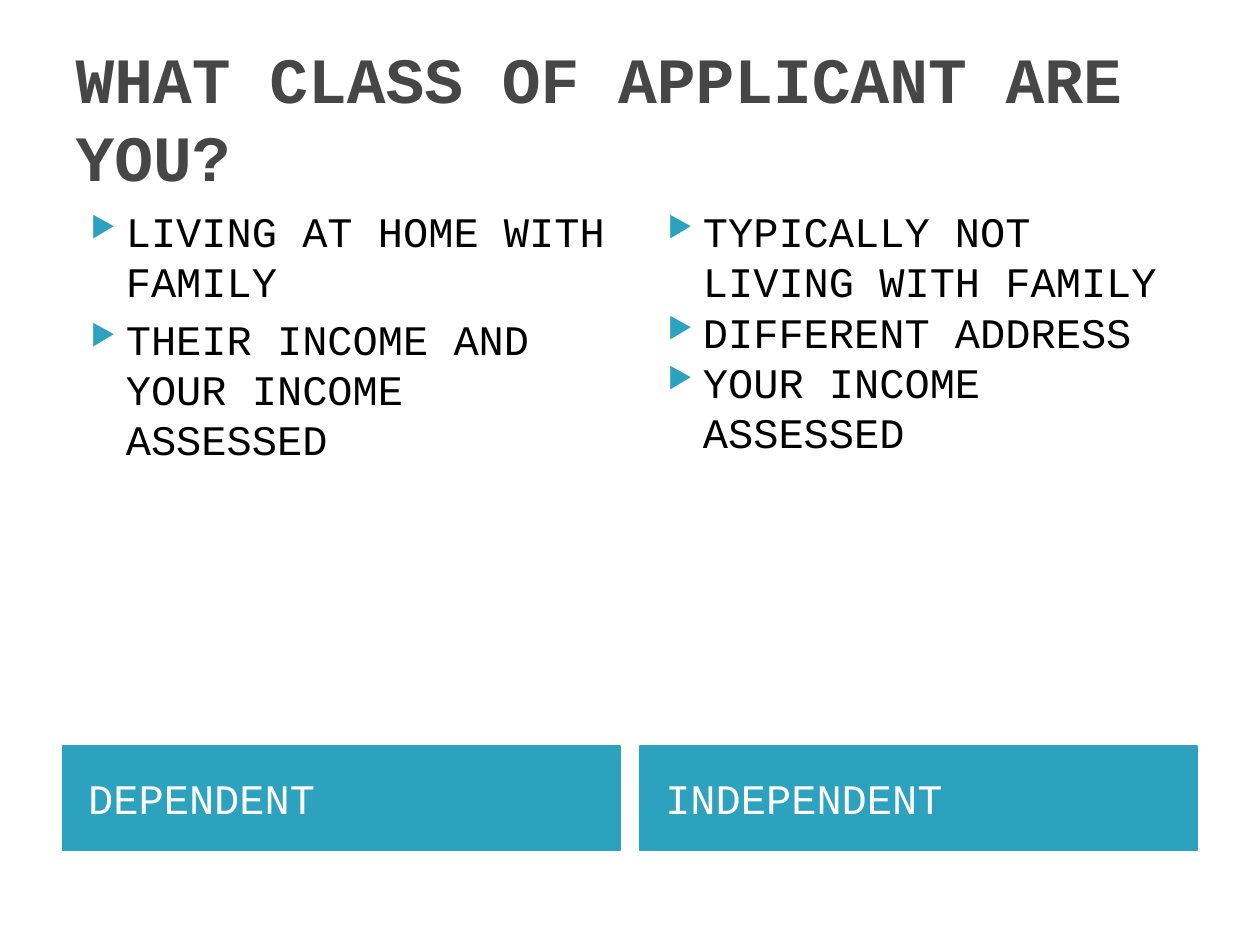
from lxml import etree
from pptx import Presentation
from pptx.dml.color import RGBColor
from pptx.enum.shapes import MSO_SHAPE
from pptx.enum.text import MSO_ANCHOR, MSO_AUTO_SIZE, PP_ALIGN
from pptx.oxml.ns import qn
from pptx.util import Inches, Pt

RECTANGLE = MSO_SHAPE.RECTANGLE
MIDDLE = MSO_ANCHOR.MIDDLE
NO_AUTOFIT = MSO_AUTO_SIZE.NONE
LEFT = PP_ALIGN.LEFT

TEAL = RGBColor(0x2D, 0xA2, 0xBF)
GREY = RGBColor(0x46, 0x46, 0x46)
BLACK = RGBColor(0, 0, 0)
WHITE = RGBColor(255, 255, 255)

FONT = "Courier New"
MARGIN = 0.5
COLUMN_WIDTH = 4.42
COLUMN_STEP = 4.58

# Heading, gap between bullets in points, bullets
COLUMNS = [
    ("DEPENDENT", 4, [
        "LIVING AT HOME WITH FAMILY",
        "THEIR INCOME AND YOUR INCOME ASSESSED",
    ]),
    ("INDEPENDENT", 0, [
        "TYPICALLY NOT LIVING WITH FAMILY",
        "DIFFERENT ADDRESS",
        "YOUR INCOME ASSESSED",
    ]),
]


def write(p, text, color, size=24, bold=False):
    p.alignment = LEFT
    r = p.add_run()
    r.text = text
    r.font.color.rgb = color
    values = {"name": FONT, "size": Pt(size), "bold": bold}
    for name, value in values.items():
        setattr(r.font, name, value)


def add_bullet(p):
    """Give the paragraph a hanging teal triangle."""
    pPr = p._p.get_or_add_pPr()
    pPr.set("marL", str(Inches(0.4)))
    pPr.set("indent", str(Inches(-0.28)))
    color = etree.SubElement(pPr, qn("a:buClr"))
    etree.SubElement(color, qn("a:srgbClr"), val=str(TEAL))
    etree.SubElement(pPr, qn("a:buSzPct"), val="68000")
    etree.SubElement(pPr, qn("a:buChar"), char="▶")


def set_title(s, text):
    title = s.shapes.title
    box = {"left": MARGIN, "top": 0.3, "width": 9, "height": 1.25}
    for name, value in box.items():
        setattr(title, name, Inches(value))
    tf = title.text_frame
    tf.auto_size = NO_AUTOFIT
    tf.vertical_anchor = MIDDLE
    write(tf.paragraphs[0], text, GREY, 36.9, True)


def add_heading(s, left, text):
    shape = s.shapes.add_shape(RECTANGLE, Inches(left), Inches(5.92),
                               Inches(COLUMN_WIDTH), Inches(0.83))
    shape.shadow.inherit = False
    shape.fill.solid()
    shape.fill.fore_color.rgb = TEAL
    shape.line.color.rgb = TEAL
    shape.line.width = Pt(0.75)
    tf = shape.text_frame
    tf.margin_left = Inches(0.2)
    tf.vertical_anchor = MIDDLE
    write(tf.paragraphs[0], text, WHITE)


def add_bullet_list(s, left, gap, items):
    box = s.shapes.add_textbox(Inches(left), Inches(1.58),
                               Inches(COLUMN_WIDTH), Inches(4.31))
    tf = box.text_frame
    tf.word_wrap = True
    for i, item in enumerate(items):
        p = tf.add_paragraph() if i else tf.paragraphs[0]
        add_bullet(p)
        if i:
            p.space_before = Pt(gap)
        write(p, item, BLACK)


def main():
    prs = Presentation()
    prs.slide_width, prs.slide_height = Inches(10), Inches(7.5)
    s = prs.slides.add_slide(prs.slide_layouts[5])
    set_title(s, "WHAT CLASS OF APPLICANT ARE YOU?")
    for i, (heading, gap, items) in enumerate(COLUMNS):
        left = MARGIN + i * COLUMN_STEP
        add_heading(s, left, heading)
        add_bullet_list(s, left, gap, items)
    prs.save("out.pptx")


if __name__ == "__main__":
    main()
